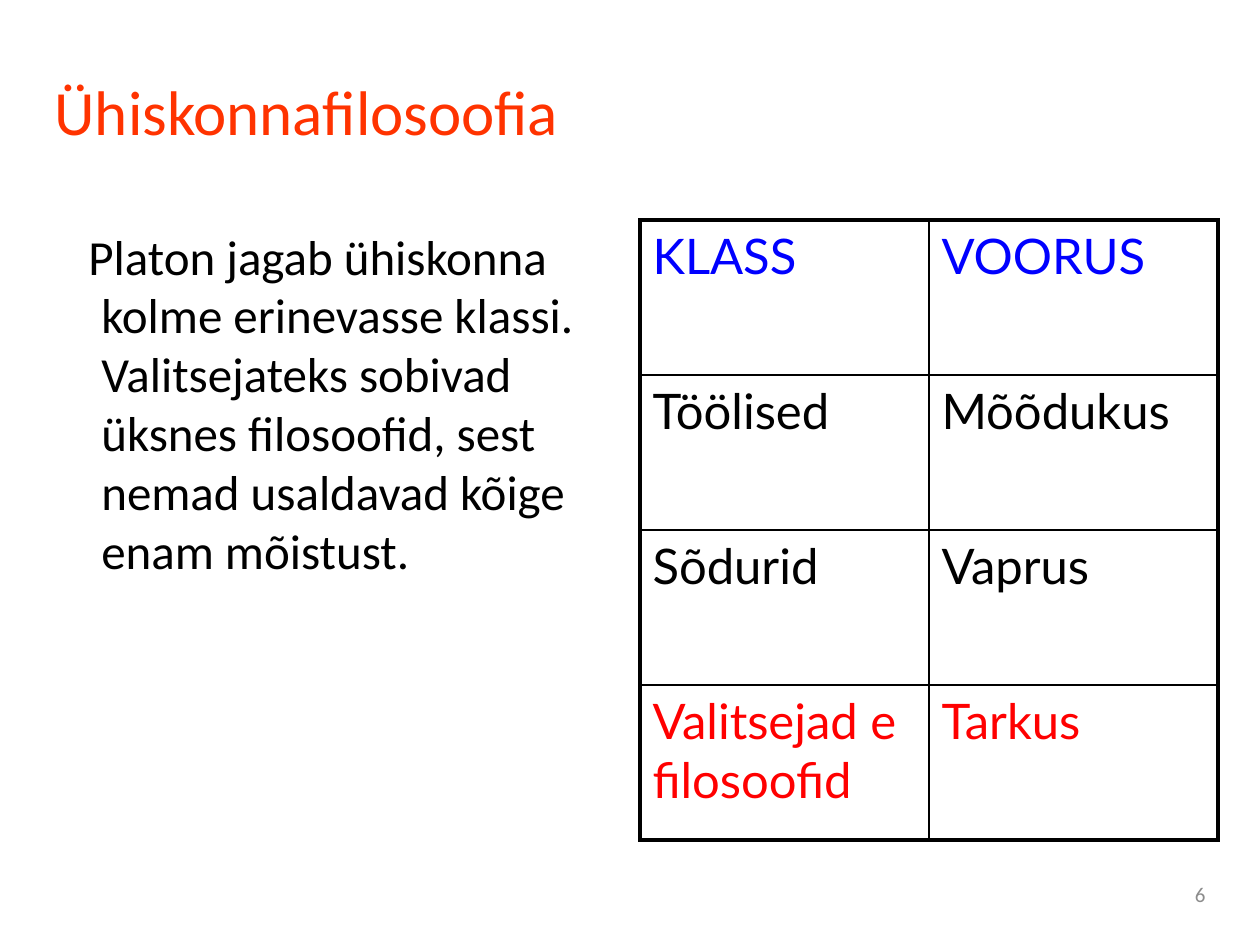
from dataclasses import dataclass

from lxml import etree
from pptx import Presentation
from pptx.dml.color import RGBColor
from pptx.enum import text
from pptx.oxml.ns import qn
from pptx.util import Emu, Pt

EMU_PER_PX = 914400 / 126


@dataclass(frozen=True)
class Theme:
    body_font: str = "Calibri"
    table_font: str = "Lato"
    title_color: str = "FF3300"
    text_color: str = "000000"
    header_color: str = "0000FF"
    accent_color: str = "FF0000"
    number_color: str = "8C8C8C"
    title_size: int = 36
    text_size: int = 28
    number_size: int = 12
    outer_border: float = 2.25
    inner_border: float = 1


THEME = Theme()

ROWS = [
    ("KLASS", "VOORUS", THEME.header_color),
    ("Töölised", "Mõõdukus", THEME.text_color),
    ("Sõdurid", "Vaprus", THEME.text_color),
    ("Valitsejad e filosoofid", "Tarkus", THEME.accent_color),
]


def px(value):
    return Emu(round(value * EMU_PER_PX))


def write(text_frame, content, font, size, color, align=text.PP_ALIGN.LEFT):
    """Put one formatted paragraph in a text frame and return it."""
    text_frame.text = content
    text_frame.word_wrap = True
    paragraph = text_frame.paragraphs[0]
    paragraph.alignment = align
    for run in paragraph.runs:
        run.font.name = font
        run.font.size = Pt(size)
        run.font.color.rgb = RGBColor.from_string(color)
    return paragraph


def add_title(slide, content, left, top, width, height):
    title = slide.shapes.title
    title.left, title.top = px(left), px(top)
    title.width, title.height = px(width), px(height)
    write(title.text_frame, content, THEME.body_font, THEME.title_size, THEME.title_color)
    title.text_frame.vertical_anchor = text.MSO_ANCHOR.MIDDLE


def add_text(slide, content, left, top, width, height, size, color, **options):
    box = slide.shapes.add_textbox(px(left), px(top), px(width), px(height))
    paragraph = write(box.text_frame, content, THEME.body_font, size, color, **options)
    return box, paragraph


def set_borders(cell, widths):
    """Draw the cell's sides; the lines must come before the fill."""
    properties = cell._tc.get_or_add_tcPr()
    for index, (side, width) in enumerate(widths.items()):
        line = etree.Element(qn(f"a:ln{side}"), w=str(Pt(width)))
        fill = etree.SubElement(line, qn("a:solidFill"))
        etree.SubElement(fill, qn("a:srgbClr"), val=THEME.text_color)
        properties.insert(index, line)


def add_class_table(slide, left, top, column_width, row_height):
    last_row, last_column = len(ROWS) - 1, 1
    table = slide.shapes.add_table(
        len(ROWS), 2, px(left), px(top),
        px(2 * column_width), px(len(ROWS) * row_height),
    ).table
    table.first_row = table.horz_banding = False
    for column in table.columns:
        column.width = px(column_width)
    for r, (*labels, color) in enumerate(ROWS):
        table.rows[r].height = px(row_height)
        for c, label in enumerate(labels):
            cell = table.cell(r, c)
            write(cell.text_frame, label, THEME.table_font, THEME.text_size, color)
            cell.fill.background()
            on_edge = {"L": c == 0, "R": c == last_column,
                       "T": r == 0, "B": r == last_row}
            set_borders(cell, {
                side: THEME.outer_border if outer else THEME.inner_border
                for side, outer in on_edge.items()
            })


def main():
    presentation = Presentation()
    presentation.slide_width, presentation.slide_height = px(1260), px(945)
    slide = presentation.slides.add_slide(presentation.slide_layouts[5])

    # Title
    add_title(slide, "Ühiskonnafilosoofia", 42, 32, 1176, 157)

    # Body text, with a slightly hanging first line
    _, paragraph = add_text(
        slide,
        "Platon jagab ühiskonna kolme erinevasse klassi. Valitsejateks sobivad "
        "üksnes filosoofid, sest nemad usaldavad kõige enam mõistust.",
        42, 220, 578, 620, THEME.text_size, THEME.text_color,
    )
    paragraph_properties = paragraph._p.get_or_add_pPr()
    paragraph_properties.set("marL", str(px(47)))
    paragraph_properties.set("indent", str(px(-13)))

    # Classes and their virtues
    add_class_table(slide, 640, 220, 289, 155)

    # Slide number
    number, _ = add_text(
        slide, "6", 903, 861, 315, 66, THEME.number_size, THEME.number_color,
        align=text.PP_ALIGN.RIGHT,
    )
    number.text_frame.vertical_anchor = text.MSO_ANCHOR.MIDDLE

    presentation.save("out.pptx")


if __name__ == "__main__":
    main()
